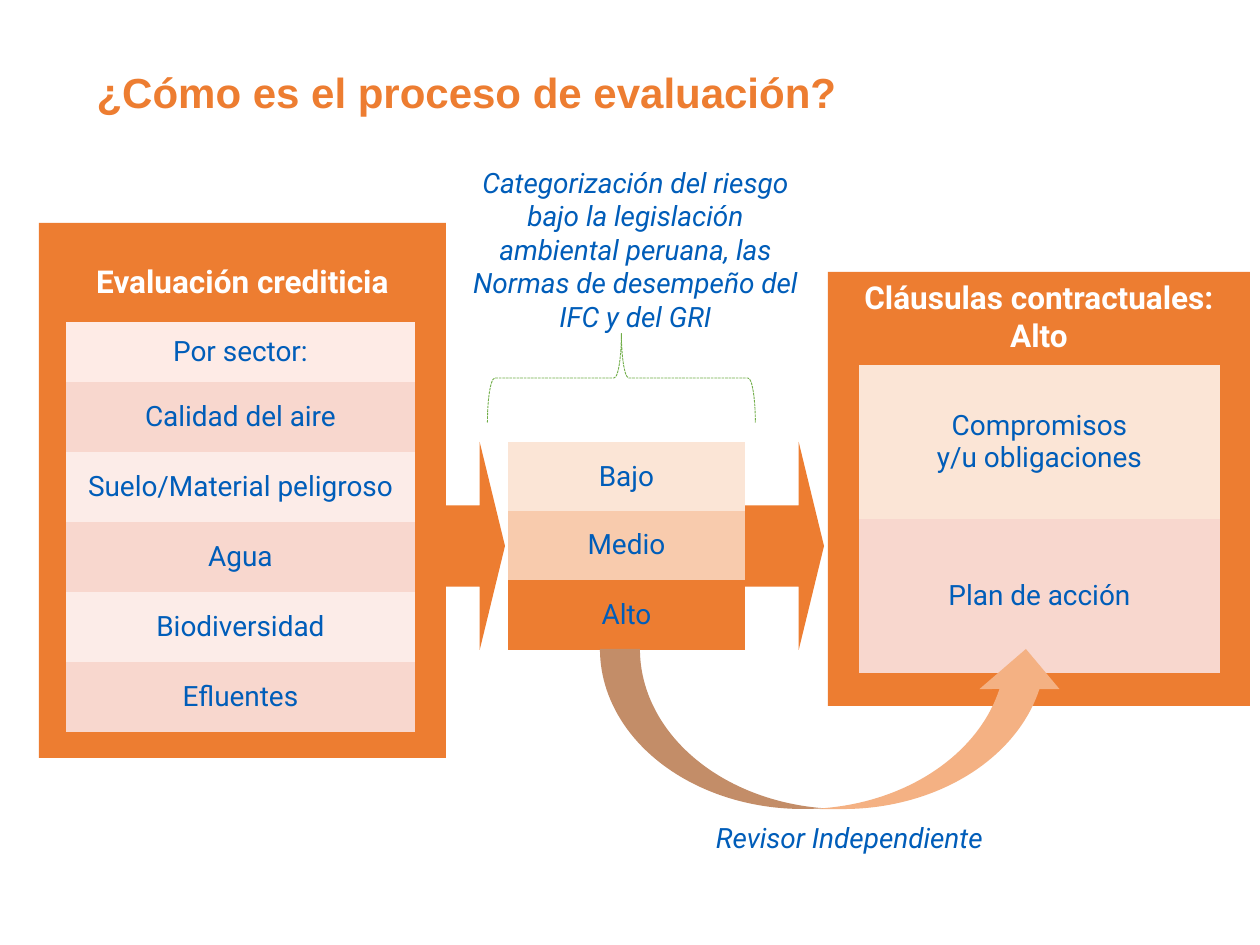
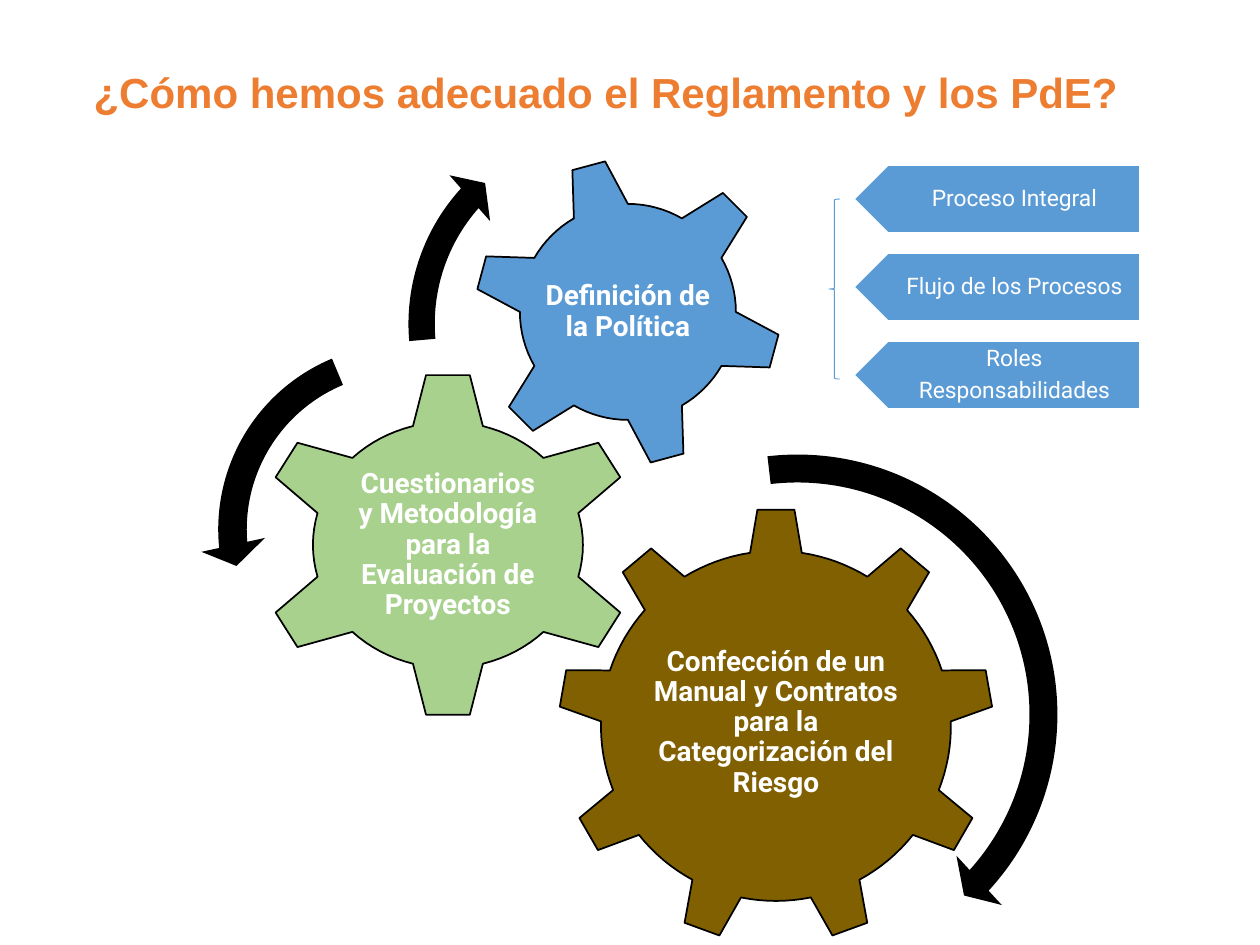
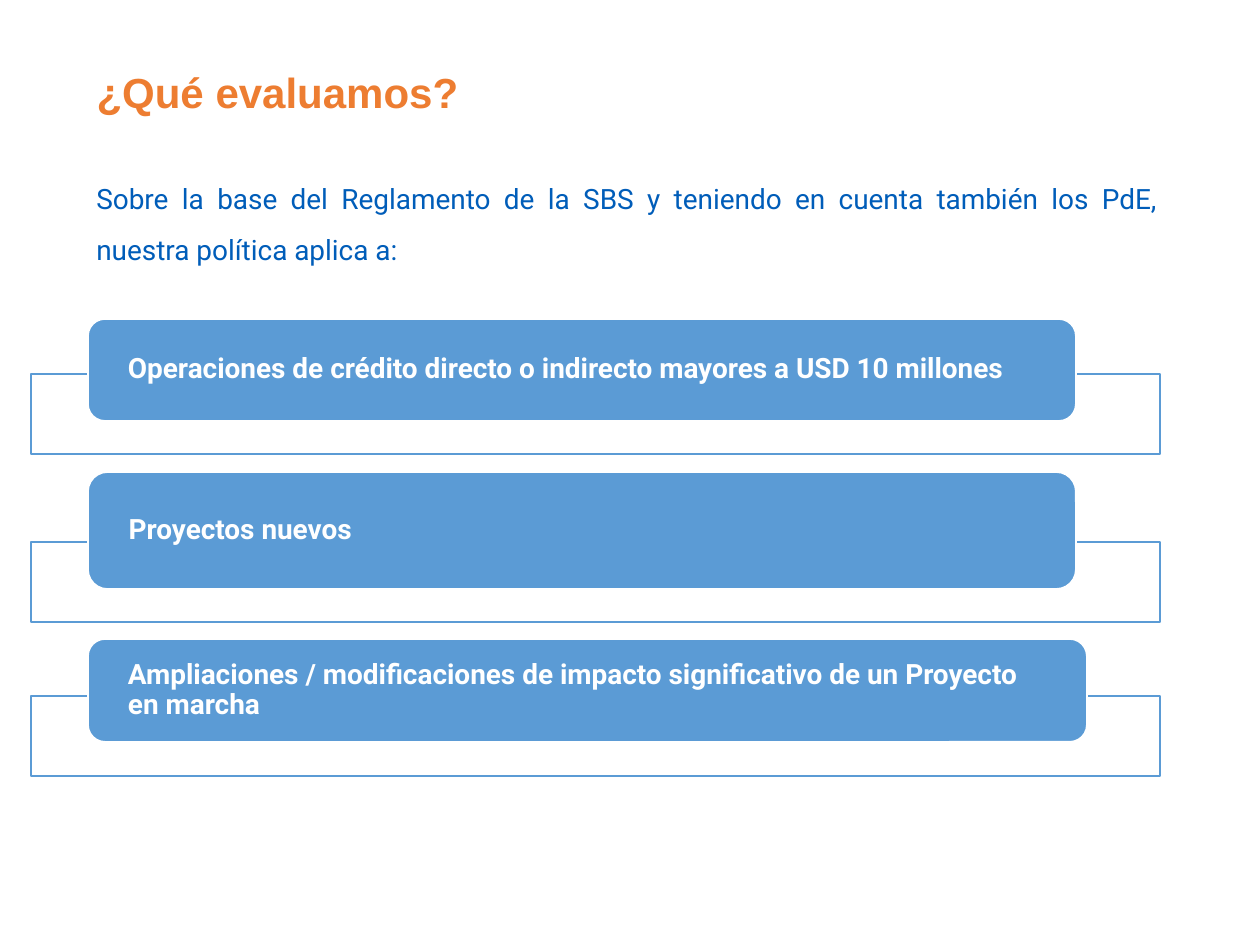
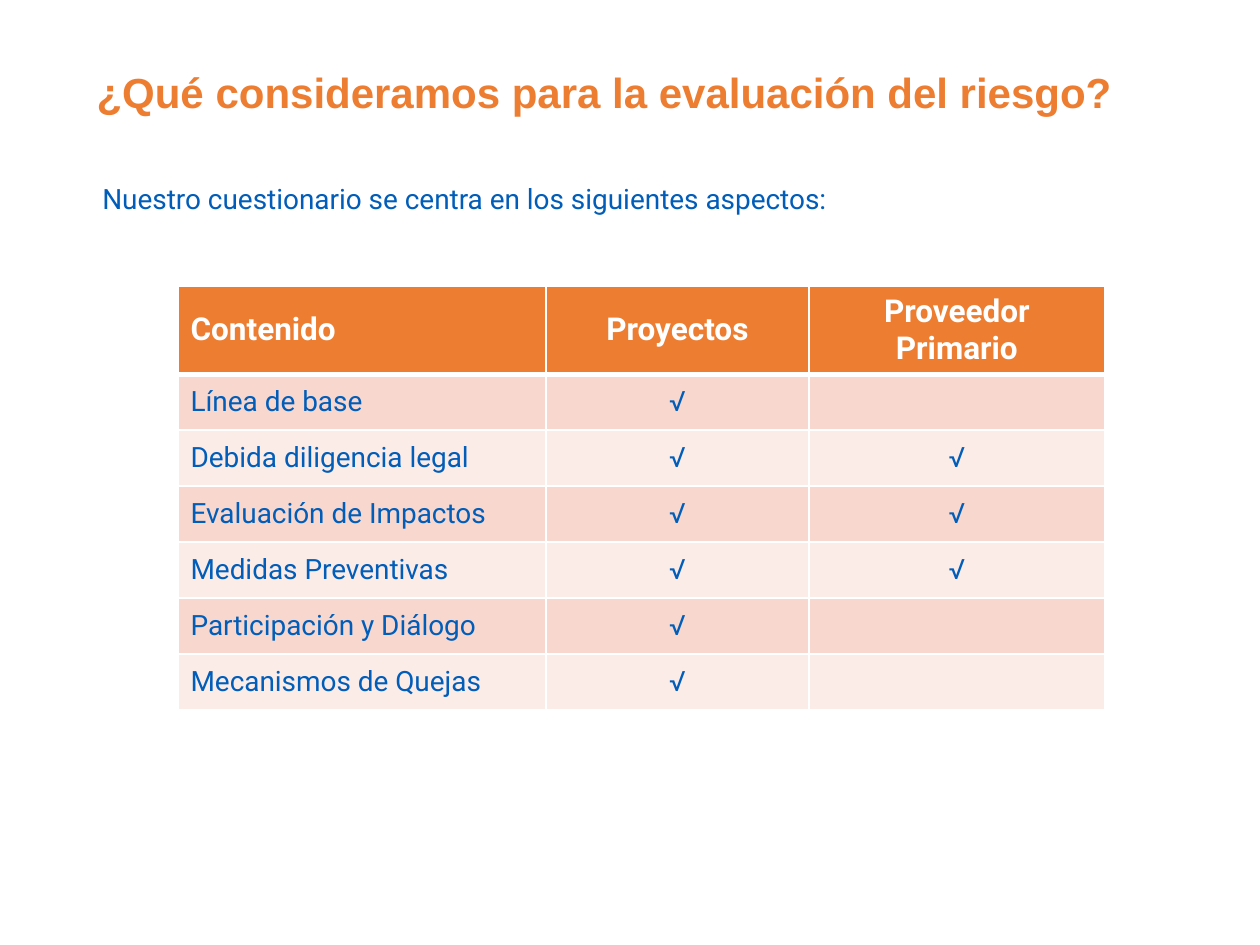
import math
from lxml import etree
from pptx import Presentation, util as u
from pptx.dml.color import RGBColor
from pptx.enum import dml, shapes, text
from pptx.oxml.ns import qn

PX = 7257
SHAPE = shapes.MSO_SHAPE
ALIGN = text.PP_ALIGN
TOP, MIDDLE = text.MSO_ANCHOR.TOP, text.MSO_ANCHOR.MIDDLE
rgb = RGBColor.from_string
ORANGE, BLUE, NAVY, WHITE, BLACK = "ED7D31", "5B9BD5", "005DB9", "FFFFFF", "000000"
ROSE, PALE, CREAM = "F8D7CE", "FCECE8", "FBE5D6"
NO_STYLE = "{2D5ABB26-0587-4C30-8999-92F81FD0307C}"


def draw(s, form, box=None, fill=None, line=None, width=1):
    if isinstance(form, list):
        pts = [(x * PX, y * PX) for x, y in form]
        fb = s.shapes.build_freeform(*pts[0])
        fb.add_line_segments(pts[1:], close=True)
        sp = fb.convert_to_shape()
    else:
        sp = s.shapes.add_shape(form, *[v * PX for v in box])
    sp.shadow.inherit = False
    if fill:
        sp.fill.solid()
        sp.fill.fore_color.rgb = rgb(fill)
    else:
        sp.fill.background()
    if line:
        sp.line.color.rgb = rgb(line)
        sp.line.width = u.Pt(width)
    else:
        sp.line.fill.background()
    return sp


def write(tf, words, size, color, bold=False, italic=False, align=ALIGN.CENTER,
          spacing=None, anchor=None, gap=0, font="Roboto"):
    tf.text = words
    if anchor is not None:
        tf.word_wrap = True
        tf.vertical_anchor = anchor
    for i, p in enumerate(tf.paragraphs):
        p.alignment = align
        p.space_before = u.Pt(gap if i else 0)
        if spacing:
            p.line_spacing = spacing
        f = p.font
        f.name, f.size, f.bold, f.italic = font, u.Pt(size), bold, italic
        f.color.rgb = rgb(color)


prs = Presentation()
prs.slide_width, prs.slide_height = u.Inches(10), u.Inches(7.5)

slides = []
for left, title in [(84, "¿Cómo es el proceso de evaluación?"),
                    (81, "¿Cómo hemos adecuado el Reglamento y los PdE?"),
                    (84, "¿Qué evaluamos?"),
                    (84, "¿Qué consideramos para la evaluación del riesgo?")]:
    s = prs.slides.add_slide(prs.slide_layouts[5])
    sp = s.shapes.title
    sp.left, sp.top, sp.width, sp.height = [v * PX for v in (left, 66, 1147, 89)]
    sp.text_frame.auto_size = text.MSO_AUTO_SIZE.NONE
    write(sp.text_frame, title, 24, ORANGE, bold=True, align=ALIGN.LEFT,
          spacing=0.9, anchor=TOP, font="Arial")
    slides.append(s)
process, policy, scope, aspects = slides

for box, heading, inset in [((39, 223, 407, 535), "Evaluación crediticia", 39),
                            ((828, 272, 422, 434), "Cláusulas contractuales: Alto", 6)]:
    sp = draw(process, SHAPE.RECTANGLE, box, ORANGE)
    sp.text_frame.margin_top = inset * PX
    write(sp.text_frame, heading, 18, WHITE, bold=True, anchor=TOP)

for box, note in [((452, 159, 367, 183), "Categorización del riesgo bajo la legislación ambiental "
                   "peruana, las Normas de desempeño del IFC y del GRI"),
                  ((578, 814, 543, 47), "Revisor Independiente")]:
    sp = process.shapes.add_textbox(*[v * PX for v in box])
    write(sp.text_frame, note, 16, NAVY, italic=True, anchor=TOP)

for left in (426, 745):
    sp = draw(process, SHAPE.RIGHT_ARROW, (left, 442, 79, 208), ORANGE)
    sp.adjustments[0], sp.adjustments[1] = 0.39, 0.32

stacks = [
    (66, 322, 349, [("Por sector:", "FEEBE6", 60), ("Calidad del aire", ROSE, 70),
                    ("Suelo/Material peligroso", PALE, 70), ("Agua", ROSE, 70),
                    ("Biodiversidad", PALE, 70), ("Efluentes", ROSE, 70)]),
    (508, 442, 237, [("Bajo", CREAM, 69), ("Medio", "F8CBAD", 69), ("Alto", ORANGE, 70)]),
    (859, 365, 361, [("Compromisos\ny/u obligaciones", CREAM, 154), ("Plan de acción", ROSE, 154)]),
]
for left, top, width, rows in stacks:
    height = sum(h for _, _, h in rows)
    tb = process.shapes.add_table(len(rows), 1, left * PX, top * PX, width * PX, height * PX).table
    tb._tbl.tblPr.find(qn("a:tableStyleId")).text = NO_STYLE
    for i, (words, fill, h) in enumerate(rows):
        tb.rows[i].height = h * PX
        cell = tb.cell(i, 0)
        cell.vertical_anchor = MIDDLE
        cell.fill.solid()
        cell.fill.fore_color.rgb = rgb(fill)
        write(cell.text_frame, words, 16, NAVY)

brace = draw(process, SHAPE.RIGHT_BRACE, (577, 244, 89, 268), line="70AD47", width=0.5)
brace.rotation = 270
brace.line.dash_style = dml.MSO_LINE.SQUARE_DOT
draw(process, SHAPE.CURVED_RIGHT_ARROW, (753, 496, 160, 466), "F4B183").rotation = 270

gears = [
    (776, 726, 175, 175, 9, 0, 1.24, 8.5, 4.9, 88, "806000",
     "Confección de un Manual y Contratos para la Categorización del Riesgo"),
    (448, 545, 135, 123, 6, 0, 1.39, 15, 6.7, 75, "A9D18E",
     "Cuestionarios y Metodología para la Evaluación de Proyectos"),
    (628, 312, 108, 108, 6, -15, 1.41, 15, 6.4, 66, BLUE,
     "Definición de la Política"),
]
for cx, cy, rx, ry, teeth, turn, reach, root, tip, inset, fill, words in gears:
    pitch = 360 / teeth
    arc = [(root + (pitch - 2 * root) * k / 8, 1) for k in range(8)]
    outline = []
    for n in range(teeth):
        for angle, radius in [(-root, 1), (-tip, reach), (tip, reach)] + arc:
            a = math.radians(turn + n * pitch + angle)
            outline.append((cx + rx * radius * math.sin(a), cy - ry * radius * math.cos(a)))
    sp = draw(policy, outline, fill=fill, line=BLACK)
    tf = sp.text_frame
    tf.margin_left = tf.margin_right = inset * PX
    write(tf, words, 16, WHITE, bold=True, spacing=0.9, anchor=MIDDLE)

for form, left, top, size, adjust in [
        (SHAPE.CIRCULAR_ARROW, 518, 435, 559, (0.05, 2.99, 25.44, 158.02, 0.06)),
        (SHAPE.LEFT_CIRCULAR_ARROW, 200, 326, 407, (0.07, 4.3, 104.89, 148.38, 0.08)),
        (SHAPE.CIRCULAR_ARROW, 391, 105, 438, (0.06, 3.94, 133.14, 105.08, 0.07))]:
    sp = draw(policy, form, (left, top, size, size), BLACK)
    for i, value in enumerate(adjust):
        sp.adjustments[i] = value

for i, words in enumerate(["Proceso Integral", "Flujo de los Procesos", "Roles\nResponsabilidades"]):
    top = 165 + 88 * i
    tag = [(1140, top + 68), (888, top + 68), (854, top + 34), (888, top), (1140, top)]
    sp = draw(policy, tag, fill=BLUE, line=WHITE)
    sp.text_frame.margin_left = 47 * PX
    write(sp.text_frame, words, 13, WHITE, spacing=0.9, anchor=MIDDLE, gap=4.5)
draw(policy, SHAPE.LEFT_BRACE, (829, 199, 11, 180), line=BLUE, width=0.5)

for s, box, words in [
        (scope, (84, 159, 1086, 152), "Sobre la base del Reglamento de la SBS y teniendo en cuenta "
         "también los PdE, nuestra política aplica a:"),
        (aspects, (90, 159, 1087, 202), "Nuestro cuestionario se centra en los siguientes aspectos:")]:
    sp = s.shapes.add_textbox(*[v * PX for v in box])
    write(sp.text_frame, words, 16, NAVY, align=ALIGN.JUSTIFY, spacing=1.5, anchor=TOP)

for frame_top, top, width, height, words in [
        (374, 319, 988, 102, "Operaciones de crédito directo o indirecto mayores a USD 10 millones"),
        (542, 472, 988, 117, "Proyectos nuevos"),
        (696, 639, 999, 103, "Ampliaciones / modificaciones de impacto significativo de un Proyecto en marcha")]:
    sp = draw(scope, SHAPE.RECTANGLE, (31, frame_top, 1129, 80), WHITE, BLUE)
    clr = next(sp._element.spPr.iter(qn("a:srgbClr")))
    etree.SubElement(clr, qn("a:alpha"), val="90000")
    sp = draw(scope, SHAPE.ROUNDED_RECTANGLE, (88, top, width, height), BLUE, WHITE)
    tf = sp.text_frame
    tf.margin_left = tf.margin_right = 35 * PX
    write(tf, words, 16, WHITE, bold=True, align=ALIGN.LEFT, spacing=0.9, anchor=MIDDLE)

checks = [
    ("Contenido", "Proyectos", "Proveedor Primario"),
    ("Línea de base", "√", ""),
    ("Debida diligencia legal", "√", "√"),
    ("Evaluación de Impactos", "√", "√"),
    ("Medidas Preventivas", "√", "√"),
    ("Participación y Diálogo", "√", ""),
    ("Mecanismos de Quejas", "√", ""),
]
tb = aspects.shapes.add_table(7, 3, 178 * PX, 286 * PX, 927 * PX, 426 * PX).table
tb._tbl.tblPr.find(qn("a:tableStyleId")).text = NO_STYLE
for c, width in enumerate((368, 263, 296)):
    tb.columns[c].width = width * PX
for r, row in enumerate(checks):
    tb.rows[r].height = (56 if r else 86) * PX
    for c, words in enumerate(row):
        cell = tb.cell(r, c)
        cell.vertical_anchor = MIDDLE
        for side in "LRTB":
            thick = (r == 0 and side == "B") or (r == 1 and side == "T")
            ln = etree.SubElement(cell._tc.get_or_add_tcPr(), qn("a:ln" + side),
                                  w=str(u.Pt(3 if thick else 1)))
            etree.SubElement(etree.SubElement(ln, qn("a:solidFill")), qn("a:srgbClr"), val=WHITE)
        cell.fill.solid()
        cell.fill.fore_color.rgb = rgb(ORANGE if r == 0 else ROSE if r % 2 else PALE)
        write(cell.text_frame, words, 16 if r else 18, NAVY if r else WHITE, bold=r == 0,
              align=ALIGN.CENTER if c else ALIGN.LEFT)

prs.save("out.pptx")
